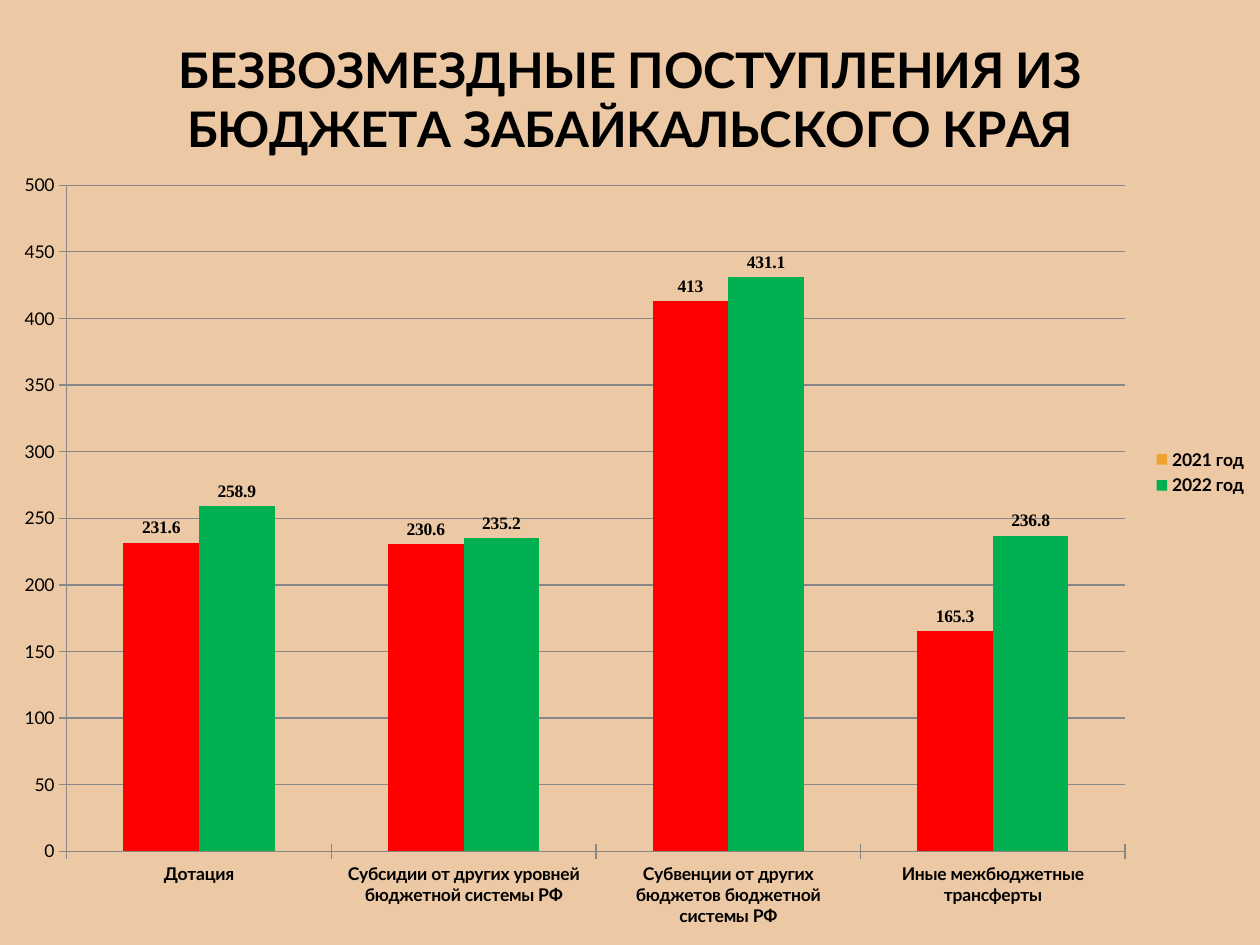
"""Build a slide with a column chart of budget transfers for 2021 and 2022."""
from lxml import etree
from pptx import Presentation
from pptx.chart.data import CategoryChartData
from pptx.dml.color import RGBColor
from pptx.enum.chart import XL_CHART_TYPE, XL_LABEL_POSITION, XL_LEGEND_POSITION, XL_TICK_MARK
from pptx.oxml.ns import qn
from pptx.util import Inches, Pt

COLUMN = XL_CHART_TYPE.COLUMN_CLUSTERED
ABOVE = XL_LABEL_POSITION.OUTSIDE_END
RIGHT = XL_LEGEND_POSITION.RIGHT
CROSS = XL_TICK_MARK.CROSS
COLORS = {"back": "ECC8A4", "text": "000000", "line": "878787",
          "2021 год": "F0A22E", "2022 год": "00B050", "point": "FF0000"}
VALUES = {"2021 год": (231.6, 230.6, 413, 165.3),
          "2022 год": (258.9, 235.2, 431.1, 236.8)}
FRAME = {"layoutTarget": "inner", "xMode": "edge", "yMode": "edge",
         "x": "0.053", "y": "0.196", "w": "0.84", "h": "0.705"}


def paint(fill, name):
    fill.solid()
    fill.fore_color.rgb = RGBColor.from_string(COLORS[name])


def style(font, size, bold, face="Lato"):
    font.size = Pt(size)
    font.bold = bold
    font.name = face
    font.color.rgb = RGBColor.from_string(COLORS["text"])


prs = Presentation()
prs.slide_width = Inches(10)
prs.slide_height = Inches(7.5)
slide = prs.slides.add_slide(prs.slide_layouts[6])
paint(slide.background.fill, "back")

data = CategoryChartData()
data.categories = ["Дотация", "Субсидии от других уровней бюджетной системы РФ",
                   "Субвенции от других бюджетов бюджетной системы РФ",
                   "Иные межбюджетные трансферты"]
for name, values in VALUES.items():
    data.add_series(name, values)
chart = slide.shapes.add_chart(
    COLUMN, 0, 0, prs.slide_width, prs.slide_height, data).chart
style(chart.font, 10, False)

chart.has_title = True
title = chart.chart_title.text_frame.paragraphs[0]
title.text = "БЕЗВОЗМЕЗДНЫЕ ПОСТУПЛЕНИЯ ИЗ БЮДЖЕТА ЗАБАЙКАЛЬСКОГО КРАЯ"
style(title.font, 28, True)
chart.chart_title.include_in_layout = False

chart.has_legend = True
chart.legend.position = RIGHT
chart.legend.include_in_layout = False
style(chart.legend.font, 10, True)

for axis, bold in ((chart.category_axis, True), (chart.value_axis, False)):
    axis.major_tick_mark = CROSS
    style(axis.tick_labels.font, 10, bold)
    paint(axis.format.line.fill, "line")
chart.value_axis.minimum_scale = 0
chart.value_axis.maximum_scale = 500
chart.value_axis.major_unit = 50
chart.value_axis.has_major_gridlines = True
paint(chart.value_axis.major_gridlines.format.line.fill, "line")

plot = chart.plots[0]
plot.vary_by_categories = False
plot.gap_width = 150
plot.overlap = 0
for series in plot.series:
    paint(series.format.fill, series.name)
    labels = series.data_labels
    labels.show_value = True
    labels.position = ABOVE
    style(labels.font, 10, True, "Times New Roman")
first = plot.series[0]
for index in range(len(first.values)):
    paint(first.points[index].format.fill, "point")

area = chart.element.find(".//" + qn("c:plotArea"))
for old in area.findall(qn("c:layout")):
    area.remove(old)
layout = etree.Element(qn("c:layout"))
area.insert(0, layout)
manual = etree.SubElement(layout, qn("c:manualLayout"))
for key, value in FRAME.items():
    etree.SubElement(manual, qn("c:" + key)).set("val", value)

prs.save("out.pptx")
